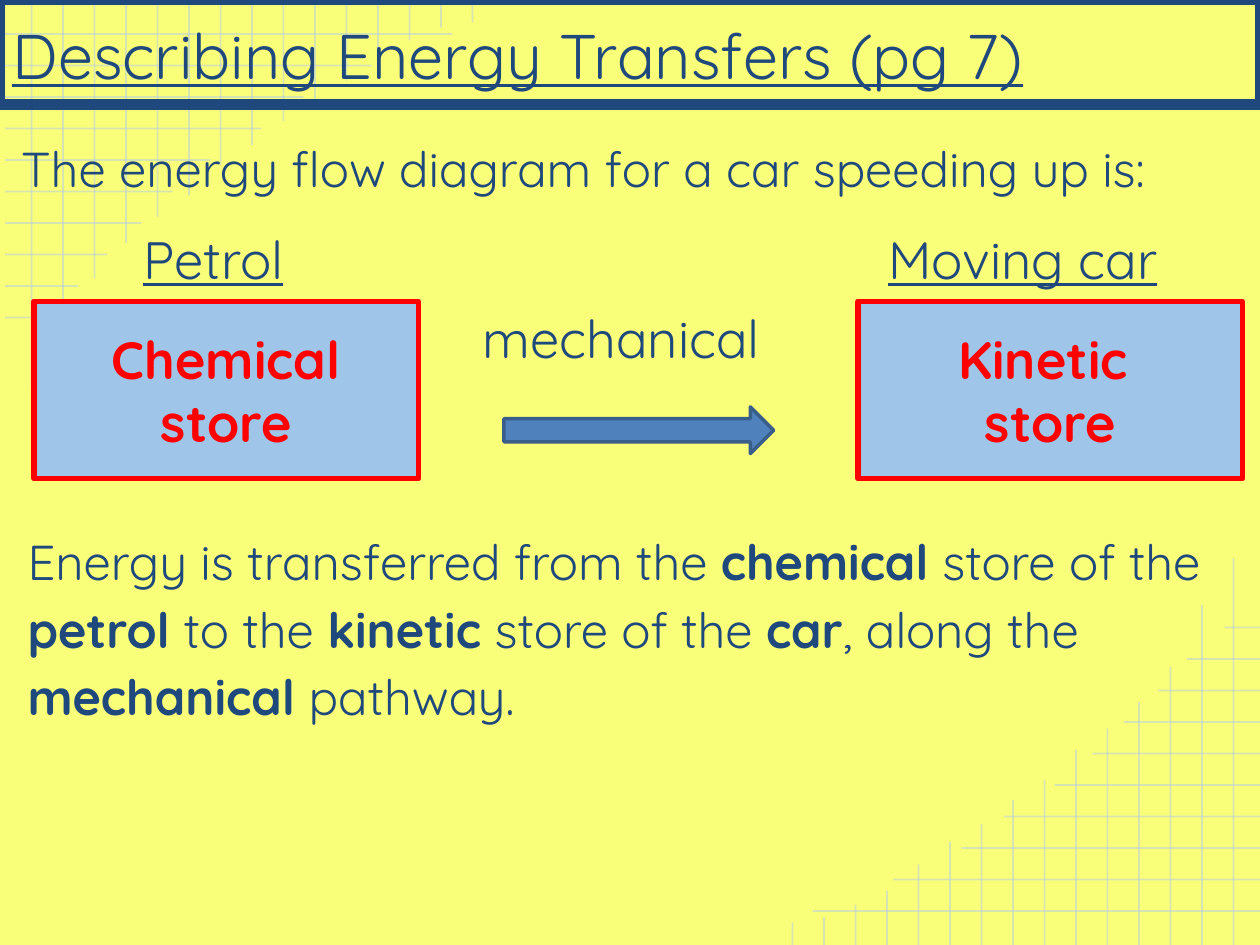
from lxml import etree
from pptx import Presentation
from pptx.dml.color import RGBColor
from pptx.enum import shapes, text
from pptx.oxml import ns
from pptx.util import Inches, Pt

YELLOW = RGBColor(0xFA, 0xFF, 0x79)
NAVY = RGBColor(0x1F, 0x49, 0x7D)
RED = RGBColor(0xFF, 0x00, 0x00)
SKY = RGBColor(0x9F, 0xC5, 0xE8)
BLUE = RGBColor(0x4F, 0x81, 0xBD)
ARROW_EDGE = RGBColor(0x39, 0x5E, 0x89)
GRID = RGBColor(0xB7, 0xCC, 0xE4)
FONT = "Quicksand"
WIDTH, HEIGHT = 10, 7.5

# Content: asterisks mark bold words
TITLE = "Describing Energy Transfers (pg 7)"
INTRO = "The energy flow diagram for a car speeding up is:"
PATHWAY = "mechanical"
STORES = [  # object, label place, store paragraphs, box left
    ("Petrol", (1.04, 1.7, 1.53, 0.63), ["Chemical store"], 0.27),
    ("Moving car", (6.95, 1.7, 2.91, 0.63), ["Kinetic ", "store"], 6.81),
]
SUMMARY = ("Energy is transferred from the *chemical *store of the *petrol *to the "
           "*kinetic *store of the *car*, along the *mechanical *pathway.")

# Corner grid: where each row ends on the right and each column at the bottom
STEP = 0.25
ROW_ENDS = [3.59, 2.95, 2.41, 2.07, 1.67, 1.37, 1.12, 0.85, 0.62, 0.32]
COLUMN_ENDS = [3.07, 2.7, 2.21, 1.93, 1.72, 1.55, 1.31, 1.15,
               0.96, 0.82, 0.64, 0.43, 0.32, 0.22, 0.18]

prs = Presentation()
prs.slide_width, prs.slide_height = Inches(WIDTH), Inches(HEIGHT)
slide = prs.slides.add_slide(prs.slide_layouts[6])
slide.background.fill.solid()
slide.background.fill.fore_color.rgb = YELLOW


def add_grid_line(*ends):
    line = slide.shapes.add_connector(shapes.MSO_CONNECTOR.STRAIGHT, *map(Inches, ends))
    line.line.color.rgb = GRID
    line.line.width = Pt(1)
    properties = line._element.spPr
    color = properties.find(".//" + ns.qn("a:srgbClr"))
    etree.SubElement(color, ns.qn("a:alpha"), val="53000")
    etree.SubElement(properties, ns.qn("a:effectLst"))


def add_box(place, kind=shapes.MSO_SHAPE.RECTANGLE, fill=None, edge=NAVY, weight=1):
    box = slide.shapes.add_shape(kind, *map(Inches, place))
    box.shadow.inherit = False
    if fill is None:
        box.fill.background()
    else:
        box.fill.solid()
        box.fill.fore_color.rgb = fill
    box.line.color.rgb = edge
    box.line.width = Pt(weight)
    return box


def write(paragraphs, place=None, box=None, size=30, color=NAVY, bold=False,
          underline=False, align=text.PP_ALIGN.LEFT,
          anchor=text.MSO_ANCHOR.TOP, spacing=None):
    if box is None:
        box = slide.shapes.add_textbox(*map(Inches, place))
    frame = box.text_frame
    frame.word_wrap = True
    frame.vertical_anchor = anchor
    frame.margin_left = frame.margin_right = Inches(0.1)
    frame.margin_top = frame.margin_bottom = Inches(0.1)
    for i, words in enumerate(paragraphs):
        paragraph = frame.add_paragraph() if i else frame.paragraphs[0]
        paragraph.alignment = align
        if spacing:
            paragraph.line_spacing = spacing
        for j, part in enumerate(words.split("*")):
            run = paragraph.add_run()
            run.text = part
            run.font.name = FONT
            run.font.size = Pt(size)
            run.font.color.rgb = color
            run.font.bold = bold or j % 2 == 1
            run.font.underline = underline


# Grid at top left, and the same turned half round at bottom right
EDGE = 0.04
grid_lines = [(EDGE, 0.02 + STEP * i, end, 0.02 + STEP * i)
              for i, end in enumerate(ROW_ENDS, 1)]
grid_lines += [(STEP * i, end, STEP * i, 0) for i, end in enumerate(COLUMN_ENDS, 1)]
for x1, y1, x2, y2 in grid_lines:
    add_grid_line(x1, y1, x2, y2)
    add_grid_line(WIDTH + EDGE - x1, HEIGHT - y1, WIDTH + EDGE - x2, HEIGHT - y2)

# Title bar and introduction
title_bar = add_box((0, 0, WIDTH, 0.83), weight=6)
write([TITLE], box=title_bar, size=36, underline=True, anchor=text.MSO_ANCHOR.BOTTOM)
write([INTRO], (0.07, 1, 9.65, 0.83), size=28)

# Energy flow diagram
add_box((4, 3.23, 2.14, 0.37), shapes.MSO_SHAPE.RIGHT_ARROW, BLUE, ARROW_EDGE, 2)
for owner, label_place, store, left in STORES:
    write([owner], label_place, underline=True)
    store_box = add_box((left, 2.39, 3.05, 1.41), fill=SKY, edge=RED, weight=3)
    write(store, box=store_box, color=RED, bold=True,
          align=text.PP_ALIGN.CENTER, anchor=text.MSO_ANCHOR.MIDDLE)
write([PATHWAY], (3.73, 2.33, 2.67, 0.63))

# Summary
write([SUMMARY], (0.12, 4.05, 9.65, 2.91), size=28, spacing=1.15)

prs.save("out.pptx")
